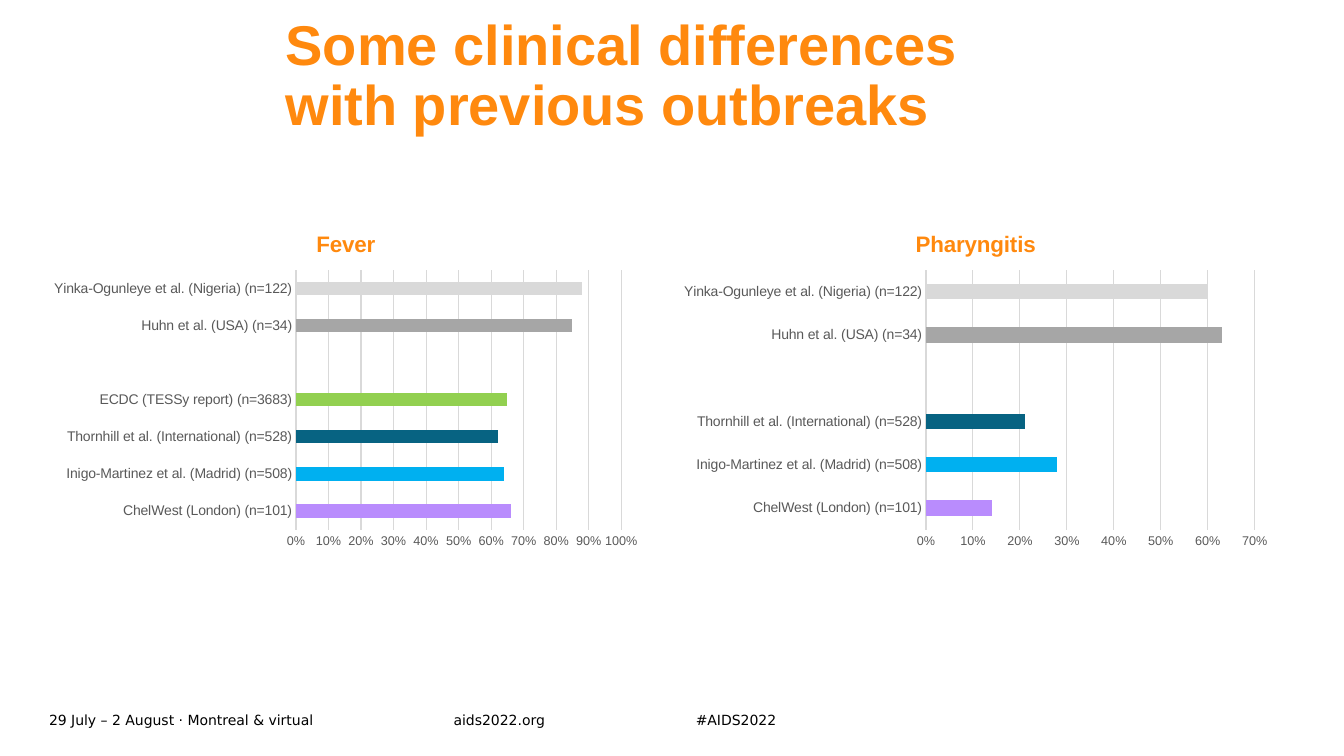
from dataclasses import dataclass

from pptx import Presentation
from pptx.chart.data import CategoryChartData
from pptx.dml.color import RGBColor
from pptx.enum.chart import XL_CHART_TYPE, XL_TICK_MARK
from pptx.enum.text import MSO_ANCHOR, MSO_AUTO_SIZE, PP_ALIGN
from pptx.util import Pt

BAR = XL_CHART_TYPE.BAR_CLUSTERED
NO_TICK = XL_TICK_MARK.NONE
MIDDLE, BOTTOM = MSO_ANCHOR.MIDDLE, MSO_ANCHOR.BOTTOM
NO_FIT = MSO_AUTO_SIZE.NONE
LEFT = PP_ALIGN.LEFT


@dataclass(frozen=True)
class Theme:
    font: str = "Arial"
    footer_font: str = "DejaVu Sans"
    accent: str = "FF890E"
    text: str = "000000"
    label: str = "595959"
    grid: str = "D9D9D9"
    bar: str = "076382"
    title_size: int = 40
    chart_title_size: int = 16
    category_size: int = 10
    value_size: int = 9
    footer_size: int = 10
    line_width: float = 0.75


THEME = Theme()

CHELWEST = "ChelWest (London) (n=101)"
MADRID = "Inigo-Martinez et al. (Madrid) (n=508)"
INTERNATIONAL = "Thornhill et al. (International) (n=528)"
ECDC = "ECDC (TESSy report) (n=3683)"
GAP = ""
USA = "Huhn et al. (USA) (n=34)"
NIGERIA = "Yinka-Ogunleye et al. (Nigeria) (n=122)"

STUDY_COLORS = {
    CHELWEST: "B98CFD",
    MADRID: "00B0F0",
    ECDC: "92D050",
    USA: "A6A6A6",
    NIGERIA: "D9D9D9",
}
FEVER = {CHELWEST: 0.66, MADRID: 0.64, INTERNATIONAL: 0.62, ECDC: 0.65,
         GAP: None, USA: 0.85, NIGERIA: 0.88}
PHARYNGITIS = {CHELWEST: 0.14, MADRID: 0.28, INTERNATIONAL: 0.21,
               GAP: None, USA: 0.63, NIGERIA: 0.6}


def rgb(color):
    return RGBColor.from_string(color)


def style_font(font, name, size, color, bold=False):
    font.name = name
    font.size = Pt(size)
    font.bold = bold
    font.color.rgb = rgb(color)


def style_line(line):
    line.color.rgb = rgb(THEME.grid)
    line.width = Pt(THEME.line_width)


def set_frame(tf, anchor):
    tf.margin_left = tf.margin_right = tf.margin_top = tf.margin_bottom = 0
    tf.word_wrap = True
    tf.auto_size = NO_FIT
    tf.vertical_anchor = anchor


def add_title(s, text):
    sp = s.shapes.title
    sp.left, sp.top, sp.width, sp.height = Pt(204), Pt(33), Pt(716), Pt(65.5)
    tf = sp.text_frame
    set_frame(tf, BOTTOM)
    tf.text = text
    p = tf.paragraphs[0]
    p.alignment = LEFT
    p.line_spacing = 0.9
    for r in p.runs:
        style_font(r.font, THEME.font, THEME.title_size, THEME.accent, True)


def add_footer(s, text, left, width):
    sp = s.shapes.add_textbox(Pt(left), Pt(505.5), Pt(width), Pt(17))
    tf = sp.text_frame
    set_frame(tf, MIDDLE)
    tf.text = text
    style_font(tf.paragraphs[0].runs[0].font, THEME.footer_font,
               THEME.footer_size, THEME.text)


def add_symptom_chart(s, symptom, shares, left, maximum):
    data = CategoryChartData(number_format="0%")
    data.categories = list(shares)
    data.add_series(symptom, list(shares.values()))
    chart = s.shapes.add_chart(BAR, Pt(left), Pt(152.5), Pt(434), Pt(244),
                               data).chart
    style_font(chart.font, THEME.font, THEME.category_size, THEME.text)
    chart.has_legend = False
    chart.has_title = True
    tf = chart.chart_title.text_frame
    tf.text = symptom
    style_font(tf.paragraphs[0].runs[0].font, THEME.font,
               THEME.chart_title_size, THEME.accent, True)

    studies, values = chart.category_axis, chart.value_axis
    for axis, size in ((studies, THEME.category_size),
                       (values, THEME.value_size)):
        axis.major_tick_mark = axis.minor_tick_mark = NO_TICK
        style_font(axis.tick_labels.font, THEME.font, size, THEME.label)
    style_line(studies.format.line)
    values.format.line.fill.background()
    style_line(values.major_gridlines.format.line)
    values.minimum_scale, values.maximum_scale = 0, maximum
    values.major_unit = 0.1
    values.tick_labels.number_format = "0%"
    values.tick_labels.number_format_is_linked = False

    plot = chart.plots[0]
    plot.gap_width = 182
    plot.vary_by_categories = False
    series = plot.series[0]
    series.invert_if_negative = False
    series.format.fill.solid()
    series.format.fill.fore_color.rgb = rgb(THEME.bar)
    for i, study in enumerate(shares):
        if study in STUDY_COLORS:
            fill = series.points[i].format.fill
            fill.solid()
            fill.fore_color.rgb = rgb(STUDY_COLORS[study])


def main():
    prs = Presentation()
    prs.slide_width, prs.slide_height = Pt(960), Pt(540)
    s = prs.slides.add_slide(prs.slide_layouts[5])
    add_footer(s, "29 July – 2 August · Montreal & virtual", 35, 289)
    add_footer(s, "aids2022.org", 324, 139)
    add_footer(s, "#AIDS2022", 497, 139)
    add_title(s, "Some clinical differences \vwith previous outbreaks")
    add_symptom_chart(s, "Fever", FEVER, 30, 1)
    add_symptom_chart(s, "Pharyngitis", PHARYNGITIS, 480, 0.7)
    prs.save("out.pptx")


if __name__ == "__main__":
    main()
